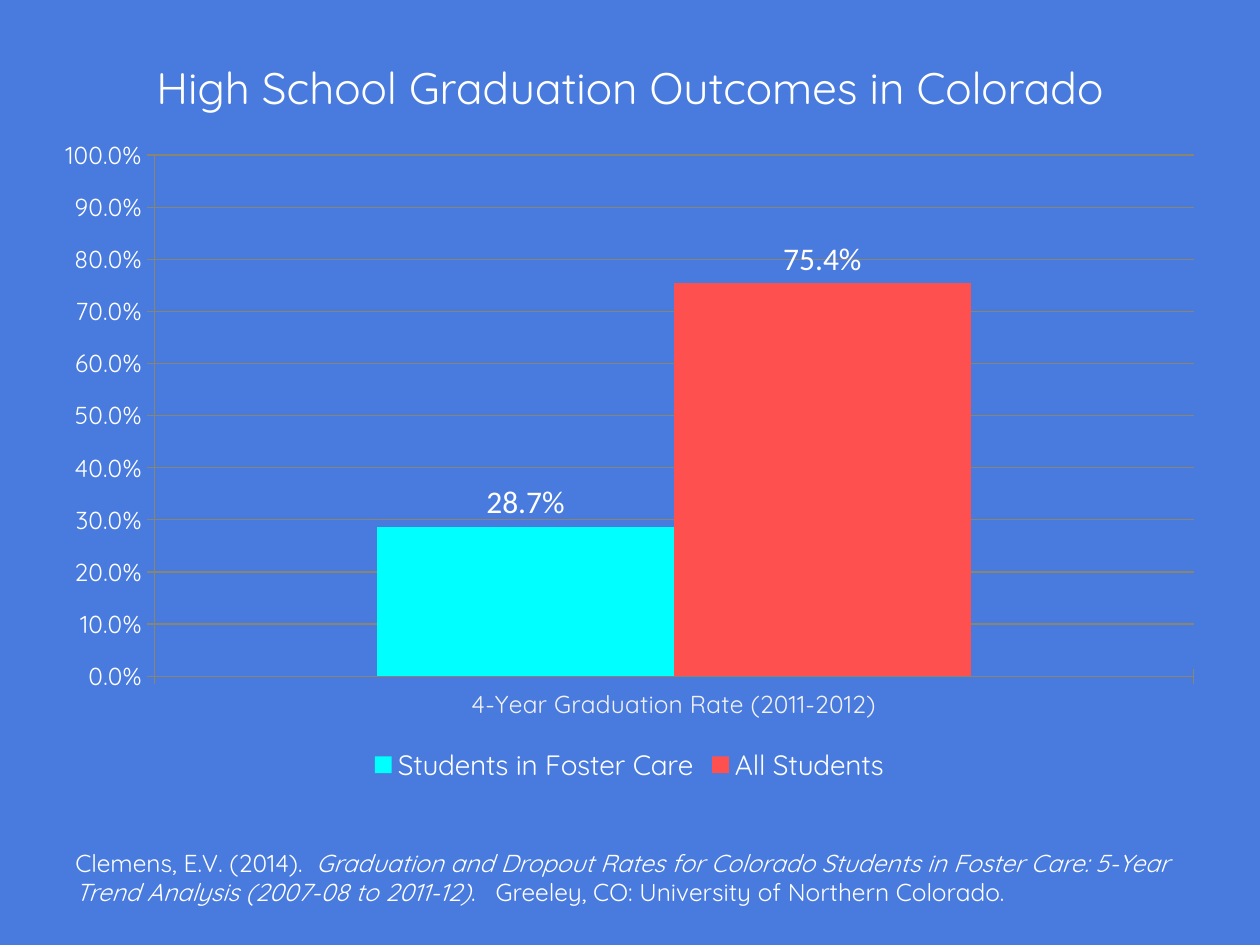
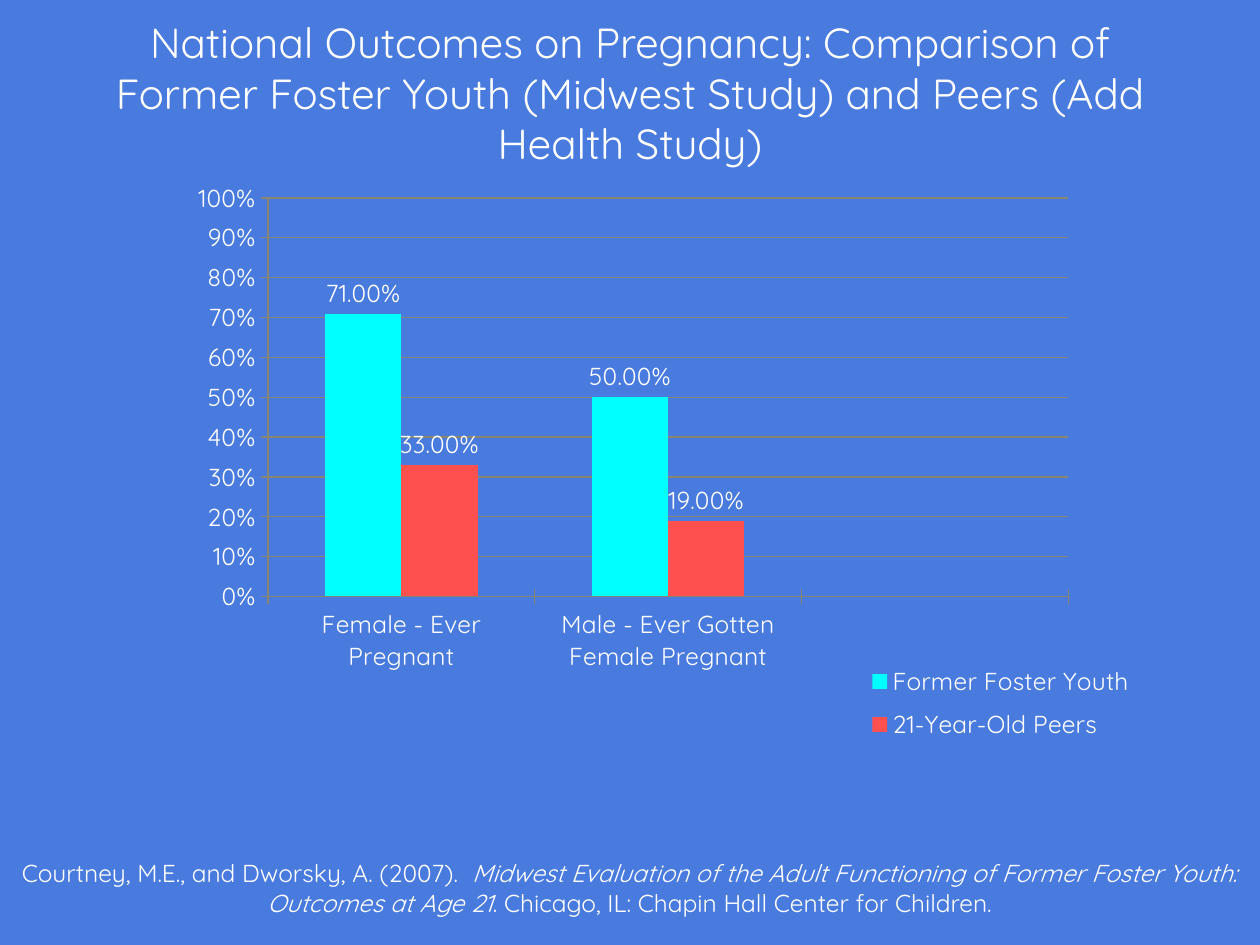
import pptx
import pptx.chart.data
import pptx.dml.color
import pptx.enum.chart
import pptx.enum.text
import pptx.oxml
import pptx.oxml.ns
import pptx.util

WIDTH, HEIGHT = 10, 7.5
FONT = "Quicksand"
COLORS = {"background": "497BDF", "text": "FFFFFF", "soft": "F2F2F2",
          "grid": "8A8570", "foster": "00FFFF", "peers": "FF5050"}

# Boxes are left, top, width, height in inches; layouts are shares of the chart.
SLIDES = [
    {
        "title": "High School Graduation Outcomes in Colorado",
        "title_box": (0.5, 0.3, 9, 0.78), "title_size": 25.2,
        "chart_box": (0.33, 1, 9.33, 5.25),
        "categories": ["4-Year Graduation Rate (2011-2012)"],
        "series": [("Students in Foster Care", [0.287], "foster"),
                   ("All Students", [0.754], "peers")],
        "plot": (0.096, 0.044, 0.884, 0.788),
        "axis_format": "0.0%", "category_color": "soft",
        "labels": {"size": 18, "font": "Calibri"}, "label_format": "0.0%",
        "legend": "BOTTOM", "legend_size": 16, "legend_layout": None,
        "source": [("Clemens, E.V. (2014).  ", False),
                   ("Graduation and Dropout Rates for Colorado Students in Foster Care: "
                    "5-Year Trend Analysis (2007-08 to 2011-12)", True),
                   (".   Greeley, CO: University of Northern Colorado.", False)],
        "source_box": (0.5, 6.68, 9, 0.57),
        "source_format": {"align": "LEFT", "anchor": "TOP"},
    },
    {
        "title": "National Outcomes on Pregnancy: Comparison of Former Foster Youth "
                 "(Midwest Study) and Peers (Add Health Study)",
        "title_box": (0.5, 0.47, 9, 0.53), "title_size": 24,
        "chart_box": (0.54, 1.33, 8.92, 4.83),
        "categories": ["Female - Ever Pregnant", "Male - Ever Gotten Female Pregnant", ""],
        "series": [("Former Foster Youth", [0.71, 0.5, None], "foster"),
                   ("21-Year-Old Peers", [0.33, 0.19, None], "peers")],
        "plot": (0.178, 0.05, 0.712, 0.655),
        "axis_format": "0%", "category_color": "text",
        "labels": {"size": 14}, "label_format": "0.00%",
        "legend": "RIGHT", "legend_size": 14, "legend_layout": (0.7, 0.8, 0.26, 0.16),
        "source": [("Courtney, M.E., and Dworsky, A. (2007).  ", False),
                   ("Midwest Evaluation of the Adult Functioning of Former Foster Youth: "
                    "Outcomes at Age 21", True),
                   (". Chicago, IL: Chapin Hall Center for Children.", False)],
        "source_box": (0, 6.76, WIDTH, 0.57),
        "source_format": {"align": "CENTER", "anchor": "BOTTOM"},
    },
]


def rgb(name):
    return pptx.dml.color.RGBColor.from_string(COLORS[name])


def inches(box):
    return [pptx.util.Inches(v) for v in box]


def style_font(font, size=14, color="text", font_name=FONT):
    font.size = pptx.util.Pt(size)
    font.name = font_name
    font.color.rgb = rgb(color)


def add_text(slide, runs, box, size=14, align="CENTER", anchor="MIDDLE"):
    """Add one wrapped paragraph from (text, italic) pairs."""
    tf = slide.shapes.add_textbox(*inches(box)).text_frame
    tf.word_wrap = True
    tf.vertical_anchor = pptx.enum.text.MSO_ANCHOR[anchor]
    p = tf.paragraphs[0]
    p.alignment = pptx.enum.text.PP_ALIGN[align]
    for text, italic in runs:
        r = p.add_run()
        r.text = text
        style_font(r.font, size)
        r.font.italic = italic


def layout_xml(box, inner=False):
    """Build a manual layout element for a plot area or a legend."""
    parts = ['<c:layoutTarget val="inner"/>'] if inner else []
    parts += [f'<c:{side}Mode val="edge"/>' for side in "xy"]
    parts += [f'<c:{side} val="{v}"/>' for side, v in zip("xywh", box)]
    return pptx.oxml.parse_xml(
        f'<c:layout {pptx.oxml.ns.nsdecls("c")}><c:manualLayout>'
        f'{"".join(parts)}</c:manualLayout></c:layout>')


def set_plot_layout(chart, box):
    area = chart._chartSpace.chart.plotArea
    for old in area.findall(pptx.oxml.ns.qn("c:layout")):
        area.remove(old)
    area.insert(0, layout_xml(box, inner=True))


def style_line(line):
    line.color.rgb = rgb("grid")
    line.width = pptx.util.Pt(0.75)


def style_axes(chart, content):
    for axis, color in ((chart.category_axis, content["category_color"]),
                        (chart.value_axis, "text")):
        style_font(axis.tick_labels.font, color=color)
        style_line(axis.format.line)
        axis.major_tick_mark = pptx.enum.chart.XL_TICK_MARK.CROSS
    axis = chart.value_axis
    axis.minimum_scale, axis.maximum_scale, axis.major_unit = 0, 1, 0.1
    axis.tick_labels.number_format = content["axis_format"]
    axis.tick_labels.number_format_is_linked = False
    style_line(axis.major_gridlines.format.line)


def style_legend(chart, content):
    chart.has_legend = True
    legend = chart.legend
    legend.position = pptx.enum.chart.XL_LEGEND_POSITION[content["legend"]]
    legend.include_in_layout = False
    style_font(legend.font, content["legend_size"])
    if content["legend_layout"]:
        element = legend._element
        for old in element.findall(pptx.oxml.ns.qn("c:layout")):
            element.remove(old)
        position = element.find(pptx.oxml.ns.qn("c:legendPos"))
        position.addnext(layout_xml(content["legend_layout"]))


def add_rate_chart(slide, content):
    data = pptx.chart.data.CategoryChartData(number_format=content["label_format"])
    data.categories = content["categories"]
    for name, values, _ in content["series"]:
        data.add_series(name, values)
    chart = slide.shapes.add_chart(
        pptx.enum.chart.XL_CHART_TYPE.COLUMN_CLUSTERED,
        *inches(content["chart_box"]), data).chart
    chart.has_title = False
    style_font(chart.font, 18, font_name="Calibri")
    plot = chart.plots[0]
    plot.gap_width, plot.overlap, plot.vary_by_categories = 150, 0, False
    for series, (_, _, color) in zip(plot.series, content["series"]):
        series.format.fill.solid()
        series.format.fill.fore_color.rgb = rgb(color)
        series.invert_if_negative = False
        labels = series.data_labels
        labels.show_value = True
        labels.position = pptx.enum.chart.XL_LABEL_POSITION.OUTSIDE_END
        labels.number_format = content["label_format"]
        labels.number_format_is_linked = False
        style_font(labels.font, content["labels"]["size"],
                   font_name=content["labels"].get("font", FONT))
    style_axes(chart, content)
    style_legend(chart, content)
    set_plot_layout(chart, content["plot"])


def build_slide(prs, content):
    slide = prs.slides.add_slide(prs.slide_layouts[6])
    slide.background.fill.solid()
    slide.background.fill.fore_color.rgb = rgb("background")
    add_text(slide, [(content["title"], False)], content["title_box"],
             size=content["title_size"])
    add_rate_chart(slide, content)
    add_text(slide, content["source"], content["source_box"], **content["source_format"])


def main():
    prs = pptx.Presentation()
    prs.slide_width, prs.slide_height = inches((WIDTH, HEIGHT))
    for content in SLIDES:
        build_slide(prs, content)
    prs.save("out.pptx")


if __name__ == "__main__":
    main()
